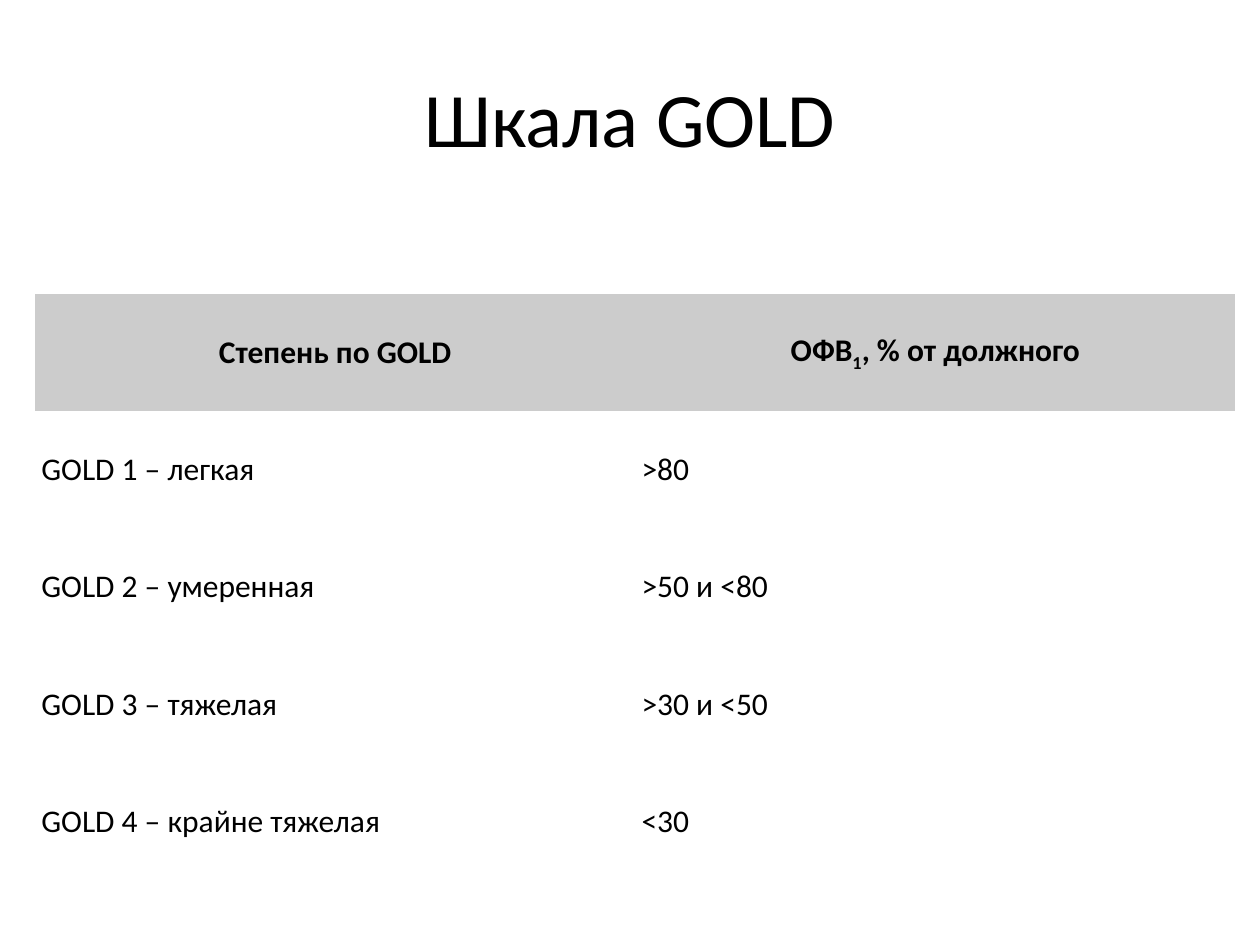
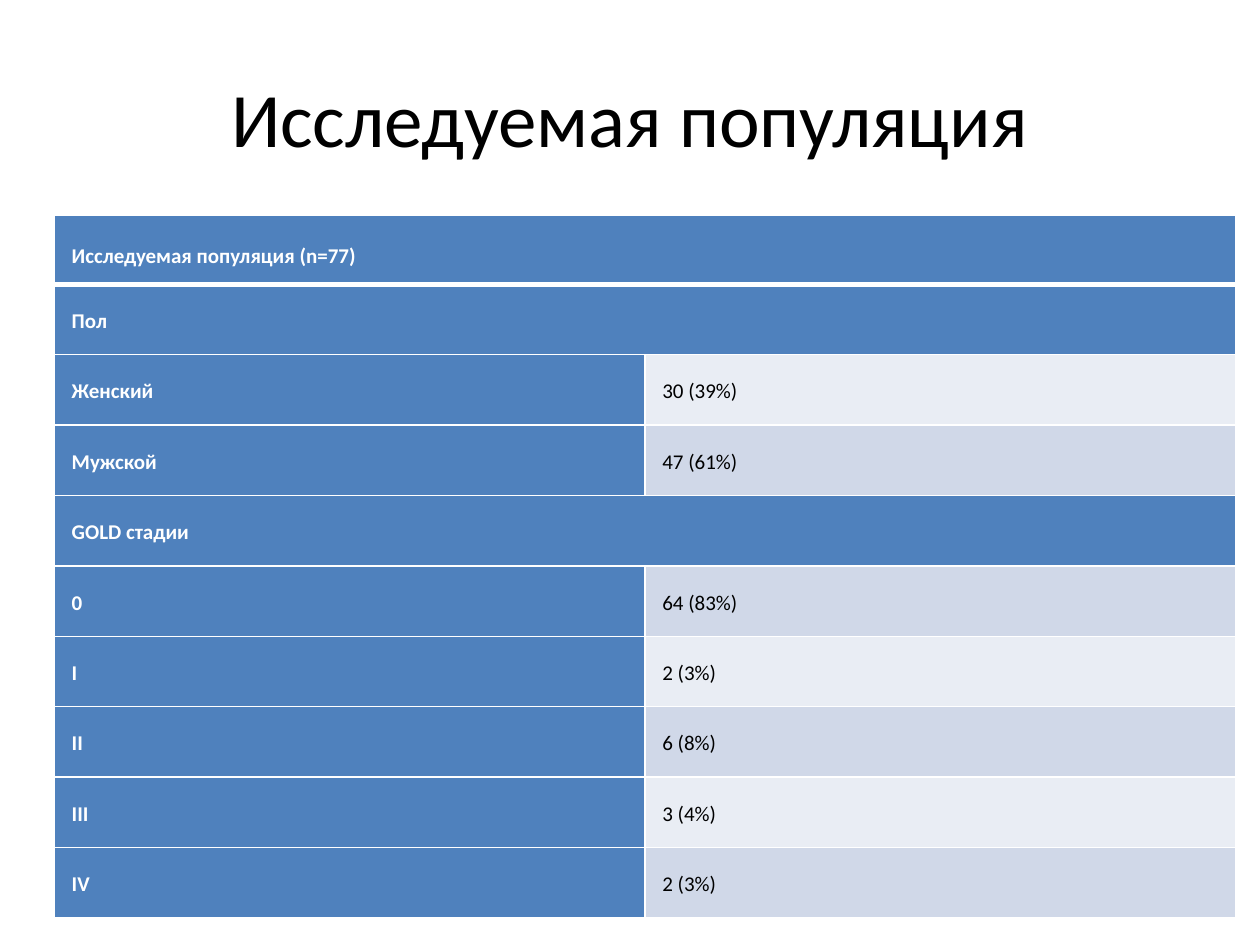
"""Build two slides with tables: the GOLD scale and the studied population."""
import pptx
import pptx.dml.color
import pptx.enum.text
import pptx.oxml
import pptx.oxml.ns
import pptx.util

Pt = pptx.util.Pt
ALIGN = pptx.enum.text.PP_ALIGN
MIDDLE = pptx.enum.text.MSO_ANCHOR.MIDDLE
NO_STYLE = "{2D5ABB26-0587-4C30-8999-92F81FD0307C}"
BLACK, WHITE, GREY, BLUE = "000000", "FFFFFF", "CCCCCC", "4F81BD"
BANDS = ["E9EDF4", "D0D8E8"]


def rgb(color):
    return pptx.dml.color.RGBColor.from_string(color)


def write(tf, text, size=18, color=BLACK, bold=False, align=ALIGN.LEFT, spacing=1.0):
    """Fill the first paragraph; a part between underscores becomes a subscript."""
    p = tf.paragraphs[0]
    p.alignment = align
    p.line_spacing = spacing
    for i, part in enumerate(text.split("_")):
        r = p.add_run()
        r.text = part
        r.font.name = "Calibri"
        r.font.size = Pt(size)
        r.font.bold = bold
        r.font.color.rgb = rgb(color)
        if i % 2:
            r.font._element.set("baseline", "-25000")


gold_rows = [
    ("Степень по GOLD", "ОФВ_1_, % от должного"),
    ("GOLD 1 – легкая", ">80"),
    ("GOLD 2 – умеренная", ">50 и <80"),
    ("GOLD 3 – тяжелая", ">30 и <50"),
    ("GOLD 4 – крайне тяжелая", "<30"),
]
population_rows = [
    ("Исследуемая популяция (n=77)",),
    ("Пол",),
    ("Женский", "30 (39%)"),
    ("Мужской", "47 (61%)"),
    ("GOLD стадии",),
    ("0", "64 (83%)"),
    ("I", "2 (3%)"),
    ("II", "6 (8%)"),
    ("III", "3 (4%)"),
    ("IV", "2 (3%)"),
]

prs = pptx.Presentation()
prs.slide_width, prs.slide_height = Pt(720), Pt(540)

tables = []
for title, rows, left, top, width, height in [
    ("Шкала GOLD", gold_rows, 20, 168, 686, 335),
    ("Исследуемая популяция", population_rows, 31, 123, 675, 402.5),
]:
    s = prs.slides.add_slide(prs.slide_layouts[5])
    sp = s.shapes.title
    sp.left, sp.top, sp.width, sp.height = Pt(36), Pt(21.6), Pt(648), Pt(90)
    sp.text_frame.vertical_anchor = MIDDLE
    write(sp.text_frame, title, size=44, align=ALIGN.CENTER)
    frame = s.shapes.add_table(len(rows), 2, Pt(left), Pt(top), Pt(width), Pt(height))
    table = frame.table
    table._tbl.tblPr[0].text = NO_STYLE
    tables.append(table)
gold, population = tables

for i, row in enumerate(gold_rows):
    for j, text in enumerate(row):
        cell = gold.cell(i, j)
        cell.margin_left = cell.margin_right = Pt(3.6)
        cell.margin_top = cell.margin_bottom = Pt(3.6)
        cell.vertical_anchor = MIDDLE
        cell.fill.solid()
        cell.fill.fore_color.rgb = rgb(WHITE if i else GREY)
        write(cell.text_frame, text, bold=i == 0,
              align=ALIGN.LEFT if i else ALIGN.CENTER)

population.rows[0].height = Pt(39.5)
for i, row in enumerate(population_rows):
    if len(row) == 1:
        population.cell(i, 0).merge(population.cell(i, 1))
    for j in range(2):
        cell = population.cell(i, j)
        cell.margin_left = cell.margin_right = Pt(10)
        cell.margin_top = Pt(10 if i else 12)
        cell.margin_bottom = Pt(10 if i else 6.5)
        cell.vertical_anchor = MIDDLE
        for side in "LRTB":
            thick = (i, side) in [(0, "B"), (1, "T")]
            cell._tc.get_or_add_tcPr().append(pptx.oxml.parse_xml(
                f'<a:ln{side} {pptx.oxml.ns.nsdecls("a")} w="{Pt(3 if thick else 1)}">'
                f'<a:solidFill><a:srgbClr val="{WHITE}"/></a:solidFill></a:ln{side}>'))
        cell.fill.solid()
        cell.fill.fore_color.rgb = rgb(BANDS[i % 2] if j and len(row) == 2 else BLUE)
        if j < len(row):
            write(cell.text_frame, row[j], size=12, color=BLACK if j else WHITE,
                  bold=j == 0, spacing=1.15)

prs.save("out.pptx")
